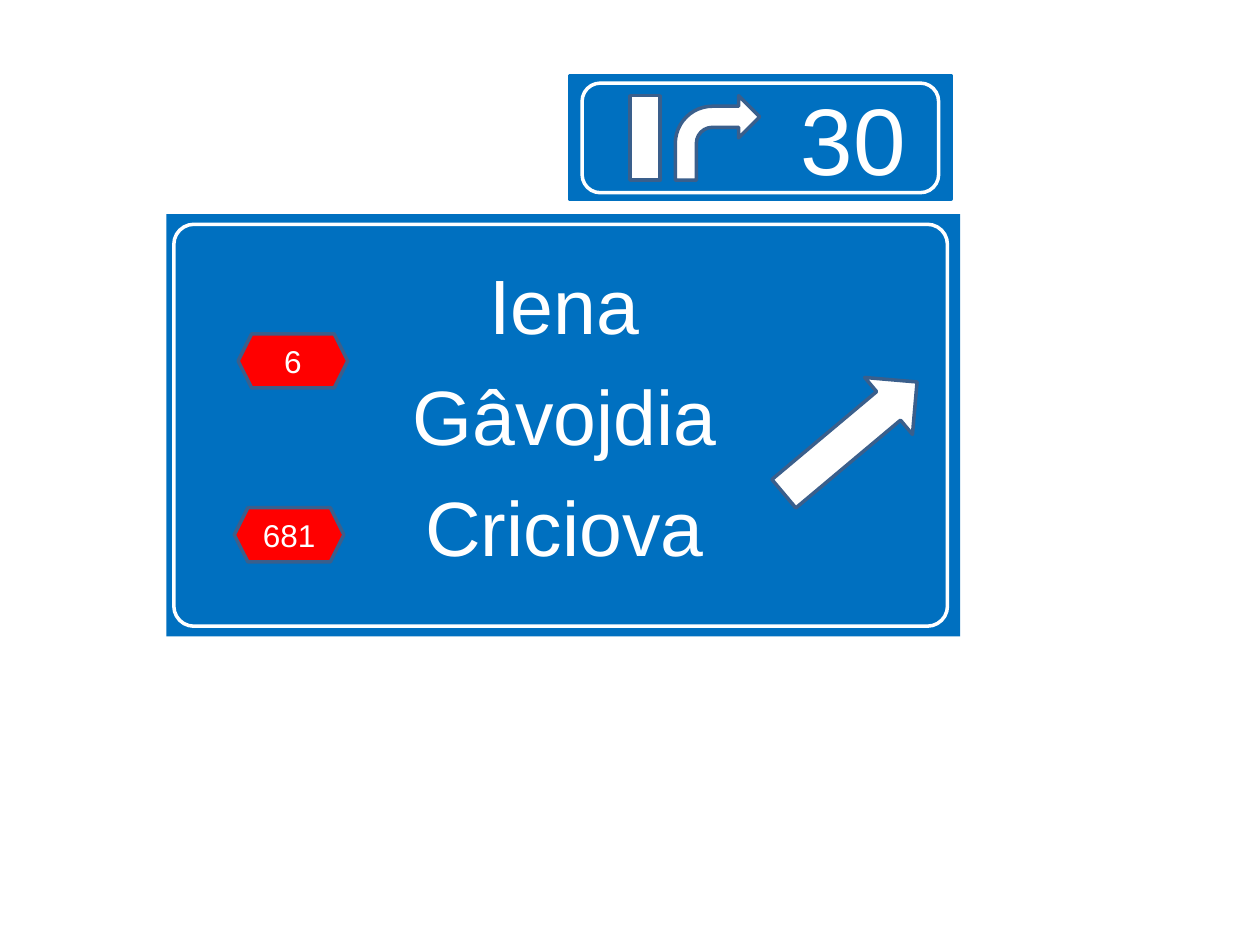
from dataclasses import dataclass
from typing import Optional

from pptx import Presentation
from pptx.dml.color import RGBColor
from pptx.enum.shapes import MSO_SHAPE as Preset
from pptx.enum.text import MSO_ANCHOR as Anchor, PP_ALIGN as Align
from pptx.util import Inches, Pt

COLORS = {
    "sign": "0070C0",
    "white": "FFFFFF",
    "road": "FF0000",
    "edge": "3A5F8C",
}
FONT = "Arial"


@dataclass
class SignPart:
    preset: Preset
    left: float
    top: float
    width: float
    height: float
    fill: Optional[str] = None
    line: Optional[str] = None
    adjustments: tuple[float, ...] = ()
    rotation: float = 0


@dataclass
class Label:
    lines: tuple[str, ...]
    size: float
    insets: tuple[float, float, float, float] = (0.1, 0.05, 0.1, 0.05)
    anchor: Anchor = Anchor.MIDDLE
    space_before: float = 0


def color(name: str) -> RGBColor:
    return RGBColor.from_string(COLORS[name])


def draw_part(slide, part: SignPart):
    shape = slide.shapes.add_shape(
        part.preset, Inches(part.left), Inches(part.top),
        Inches(part.width), Inches(part.height))
    shape.shadow.inherit = False
    shape.rotation = part.rotation
    for index, value in enumerate(part.adjustments):
        shape.adjustments[index] = value
    if part.fill:
        shape.fill.solid()
        shape.fill.fore_color.rgb = color(part.fill)
    else:
        shape.fill.background()
    if part.line:
        shape.line.color.rgb = color(part.line)
        shape.line.width = Pt(2)
    else:
        shape.line.fill.background()
    return shape


def write_label(shape, label: Label) -> None:
    frame = shape.text_frame
    frame.word_wrap = True
    frame.vertical_anchor = label.anchor
    (frame.margin_left, frame.margin_top,
     frame.margin_right, frame.margin_bottom) = map(Inches, label.insets)
    for index, text in enumerate(label.lines):
        paragraph = frame.add_paragraph() if index else frame.paragraphs[0]
        paragraph.alignment = Align.CENTER
        paragraph.space_before = Pt(label.space_before)
        run = paragraph.add_run()
        run.text = text
        run.font.name = FONT
        run.font.size = Pt(label.size)
        run.font.color.rgb = color("white")


def draw_road_badge(slide, left: float, top: float, number: str) -> None:
    badge = SignPart(Preset.HEXAGON, left, top, 0.87, 0.43, "road", "edge")
    write_label(draw_part(slide, badge), Label((number,), 18))


def draw_direction_sign(slide) -> None:
    panel = draw_part(slide, SignPart(Preset.RECTANGLE, 1.32, 1.7, 6.3, 3.35, "sign"))
    write_label(panel, Label(("Iena", "Gâvojdia", "Criciova"), 44,
                             (0.12, 0.1, 0.1, 0.51), Anchor.BOTTOM, 10.8))
    draw_part(slide, SignPart(Preset.RIGHT_ARROW, 6.06, 3.18, 1.38, 0.59,
                              "white", "edge", rotation=320))
    draw_part(slide, SignPart(Preset.ROUNDED_RECTANGLE, 1.38, 1.78, 6.14, 3.19,
                              line="white", adjustments=(0.05,)))
    draw_road_badge(slide, 1.89, 2.65, "6")
    draw_road_badge(slide, 1.86, 4.03, "681")


def draw_exit_sign(slide) -> None:
    panel = draw_part(slide, SignPart(Preset.RECTANGLE, 4.52, 0.6, 3.03, 0.98,
                                      "sign", "sign"))
    write_label(panel, Label(("30",), 54, (1.57, 0.05, 0.1, 0.05)))
    draw_part(slide, SignPart(Preset.RECTANGLE, 5, 0.76, 0.24, 0.67, "white", "edge"))
    draw_part(slide, SignPart(Preset.BENT_ARROW, 5.36, 0.76, 0.67, 0.67,
                              "white", "edge", (0.25, 0.25, 0.25, 0.44)))
    draw_part(slide, SignPart(Preset.ROUNDED_RECTANGLE, 4.62, 0.66, 2.83, 0.87,
                              line="white"))


def main() -> None:
    presentation = Presentation()
    presentation.slide_width = Inches(10)
    presentation.slide_height = Inches(7.5)
    slide = presentation.slides.add_slide(presentation.slide_layouts[6])
    draw_direction_sign(slide)
    draw_exit_sign(slide)
    presentation.save("out.pptx")


if __name__ == "__main__":
    main()
